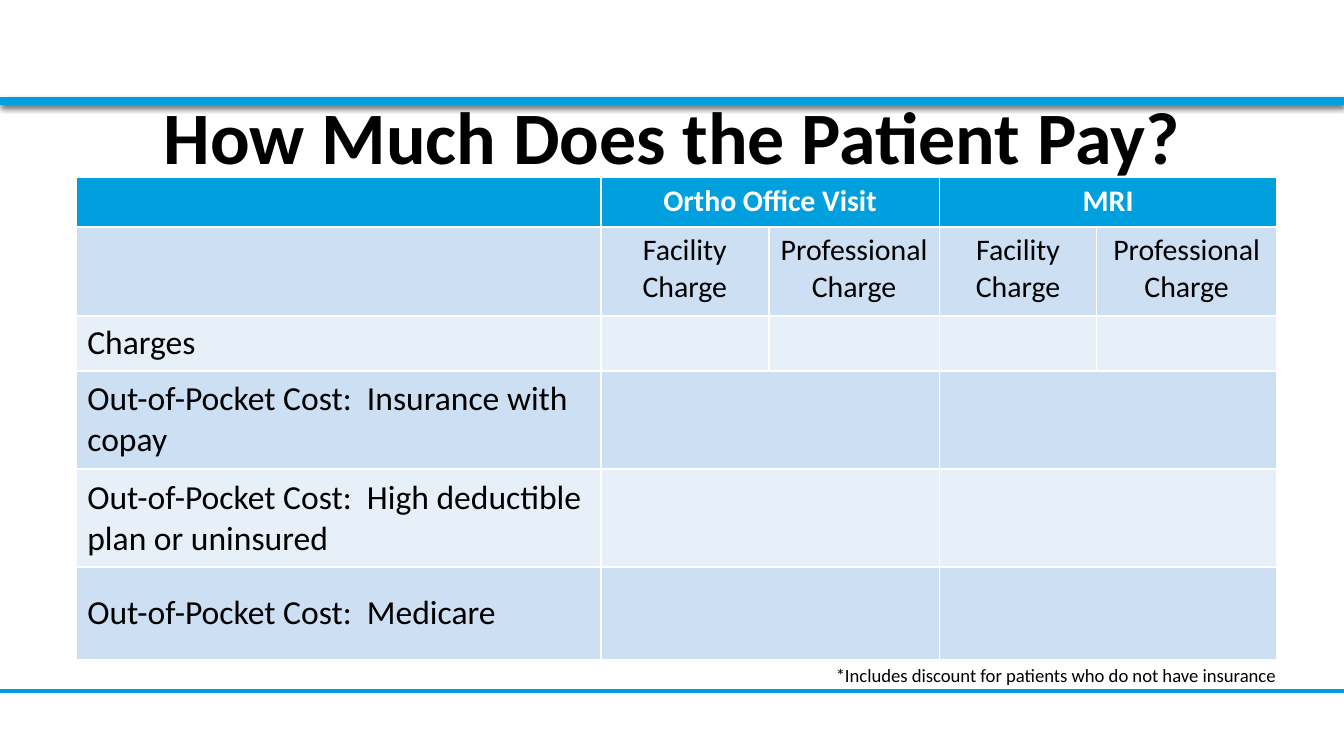
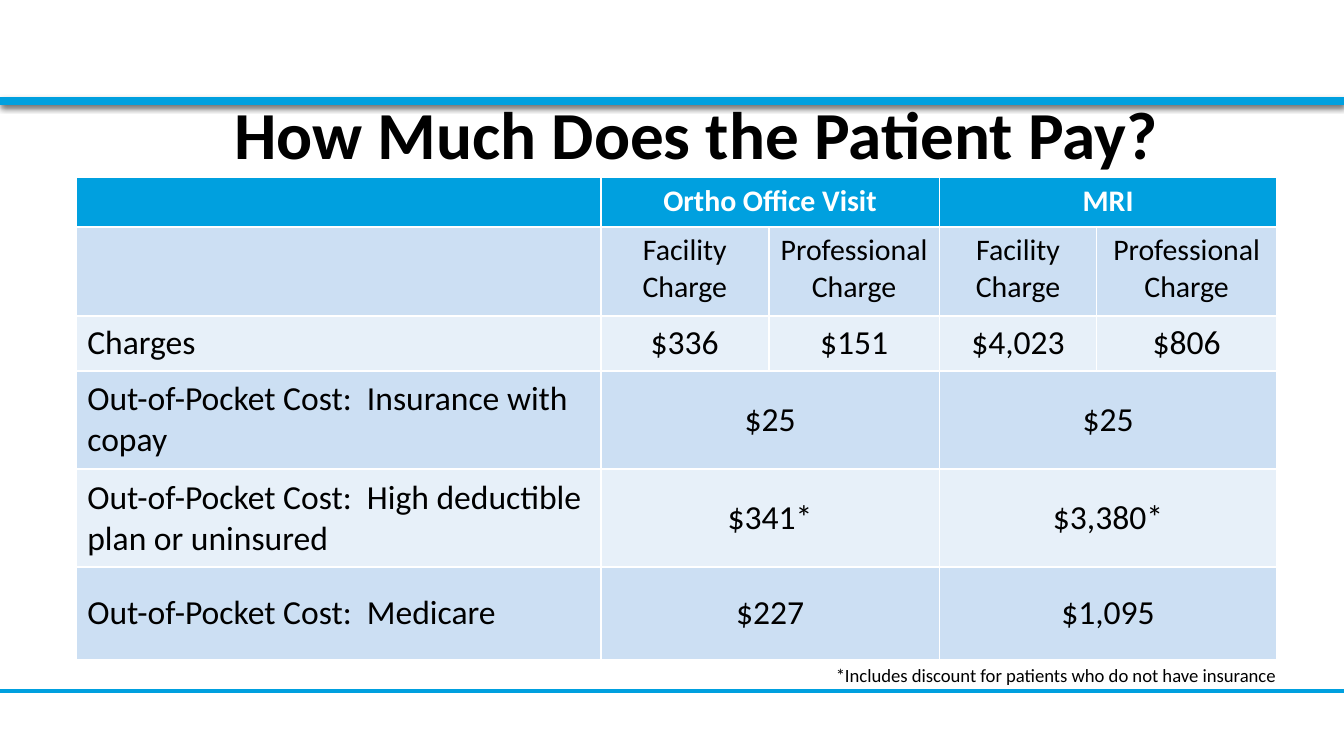
"""Builds two slides on what the patient pays: the blank cost table, then the filled one."""
from lxml.etree import SubElement
from pptx import Presentation
from pptx.dml.color import RGBColor
from pptx.enum.shapes import MSO_CONNECTOR, MSO_SHAPE
from pptx.enum.text import MSO_ANCHOR, MSO_AUTO_SIZE, PP_ALIGN
from pptx.oxml.ns import qn
from pptx.util import Emu, Pt

PX = 9144
BLUE, WHITE, BLACK = "00A0DF", "FFFFFF", "000000"
BANDS = ["CCDFF3", "E7F0F9"]
TITLE = "How Much Does the Patient Pay?"
FOOTNOTE = "*Includes discount for patients who do not have insurance"

COLUMN_WIDTHS = [390, 125, 127, 117, 134]
ROW_HEIGHTS = [37, 66, 41, 73, 73, 69]
HEADER_ROWS = [
    ["", "Ortho Office Visit", "", "MRI", ""],
    ["", "Facility Charge", "Professional Charge", "Facility Charge", "Professional Charge"],
]
COST_LABELS = [
    "Charges",
    "Out-of-Pocket Cost:  Insurance with copay",
    "Out-of-Pocket Cost:  High deductible plan or uninsured",
    "Out-of-Pocket Cost:  Medicare",
]
BLANK_COSTS = [[""] * 4] * 4
COSTS = [
    ["$336", "$151", "$4,023", "$806"],
    ["$25", "", "$25", ""],
    ["$341*", "", "$3,380*", ""],
    ["$227", "", "$1,095", ""],
]
MERGED_ROWS = [0, 3, 4, 5]
SLIDES = [
    ((50, 62, 900, 77), 39.6, BLANK_COSTS),
    ((86, 65, 864, 67), 36, COSTS),
]


def color(value):
    return RGBColor.from_string(value)


def set_effects(shape, shadow=None):
    effects = SubElement(shape._element.spPr, qn("a:effectLst"))
    if shadow:
        opacity, blur, distance = shadow
        outer = SubElement(effects, qn("a:outerShdw"), blurRad=str(Pt(blur)),
                           dist=str(Pt(distance)), dir="5400000", rotWithShape="0")
        shade = SubElement(outer, qn("a:srgbClr"), val=BLACK)
        SubElement(shade, qn("a:alpha"), val=str(opacity * 1000))


presentation = Presentation()
presentation.slide_width = Emu(1000 * PX)
presentation.slide_height = Emu(5625 * PX // 10)

for title_box, title_size, costs in SLIDES:
    slide = presentation.slides.add_slide(presentation.slide_layouts[6])

    header = slide.shapes.add_shape(MSO_SHAPE.RECTANGLE, 0, 0, 1000 * PX, 77 * PX)
    header.fill.solid()
    header.fill.fore_color.rgb = color(WHITE)
    header.line.fill.background()
    set_effects(header, (35, 3.1, 1.8))

    for top, width, shadow in [(514, 2, None), (75, 4.5, (38, 3.1, 1.6))]:
        rule = slide.shapes.add_connector(MSO_CONNECTOR.STRAIGHT, 0, top * PX, 1000 * PX, top * PX)
        rule.line.color.rgb = color(BLUE)
        rule.line.width = Pt(width)
        set_effects(rule, shadow)

    table = slide.shapes.add_table(6, 5, 57 * PX, 132 * PX, 893 * PX, 359 * PX).table
    for column, width in zip(table.columns, COLUMN_WIDTHS):
        column.width = Emu(width * PX)
    for row, height in zip(table.rows, ROW_HEIGHTS):
        row.height = Emu(height * PX)
    for row_index in MERGED_ROWS:
        for first in (1, 3):
            table.cell(row_index, first).merge(table.cell(row_index, first + 1))

    rows = HEADER_ROWS + [[label, *values] for label, values in zip(COST_LABELS, costs)]
    for row_index, texts in enumerate(rows):
        size = 16 if row_index < 2 else 18
        for column_index, text in enumerate(texts):
            cell = table.cell(row_index, column_index)
            cell.fill.solid()
            cell.fill.fore_color.rgb = color(BANDS[(row_index - 1) % 2] if row_index else BLUE)
            cell.margin_left = cell.margin_right = Emu(8 * PX)
            cell.margin_top = cell.margin_bottom = Emu(4 * PX)
            cell.vertical_anchor = MSO_ANCHOR.TOP if row_index < 2 else MSO_ANCHOR.MIDDLE
            paragraph = cell.text_frame.paragraphs[0]
            paragraph.alignment = PP_ALIGN.CENTER if column_index else PP_ALIGN.LEFT
            if text:
                paragraph.text = text
            else:
                SubElement(paragraph._p, qn("a:endParaRPr"), sz=str(size * 100))
            paragraph.font.name = "Calibri"
            paragraph.font.size = Pt(size)
            paragraph.font.bold = row_index == 0
            paragraph.font.color.rgb = color(BLACK if row_index else WHITE)

    for text, box, size, is_title in [
        (TITLE, title_box, title_size, True),
        (FOOTNOTE, (612, 489, 388, 27), 10, False),
    ]:
        frame = slide.shapes.add_textbox(*[Emu(length * PX) for length in box]).text_frame
        frame.word_wrap = True
        frame.auto_size = MSO_AUTO_SIZE.NONE if is_title else MSO_AUTO_SIZE.SHAPE_TO_FIT_TEXT
        frame.vertical_anchor = MSO_ANCHOR.MIDDLE if is_title else MSO_ANCHOR.TOP
        paragraph = frame.paragraphs[0]
        paragraph.text = text
        paragraph.alignment = PP_ALIGN.CENTER if is_title else PP_ALIGN.LEFT
        paragraph.font.name = "Calibri"
        paragraph.font.size = Pt(size)
        paragraph.font.bold = is_title
        paragraph.font.color.rgb = color(BLACK)

presentation.save("out.pptx")
